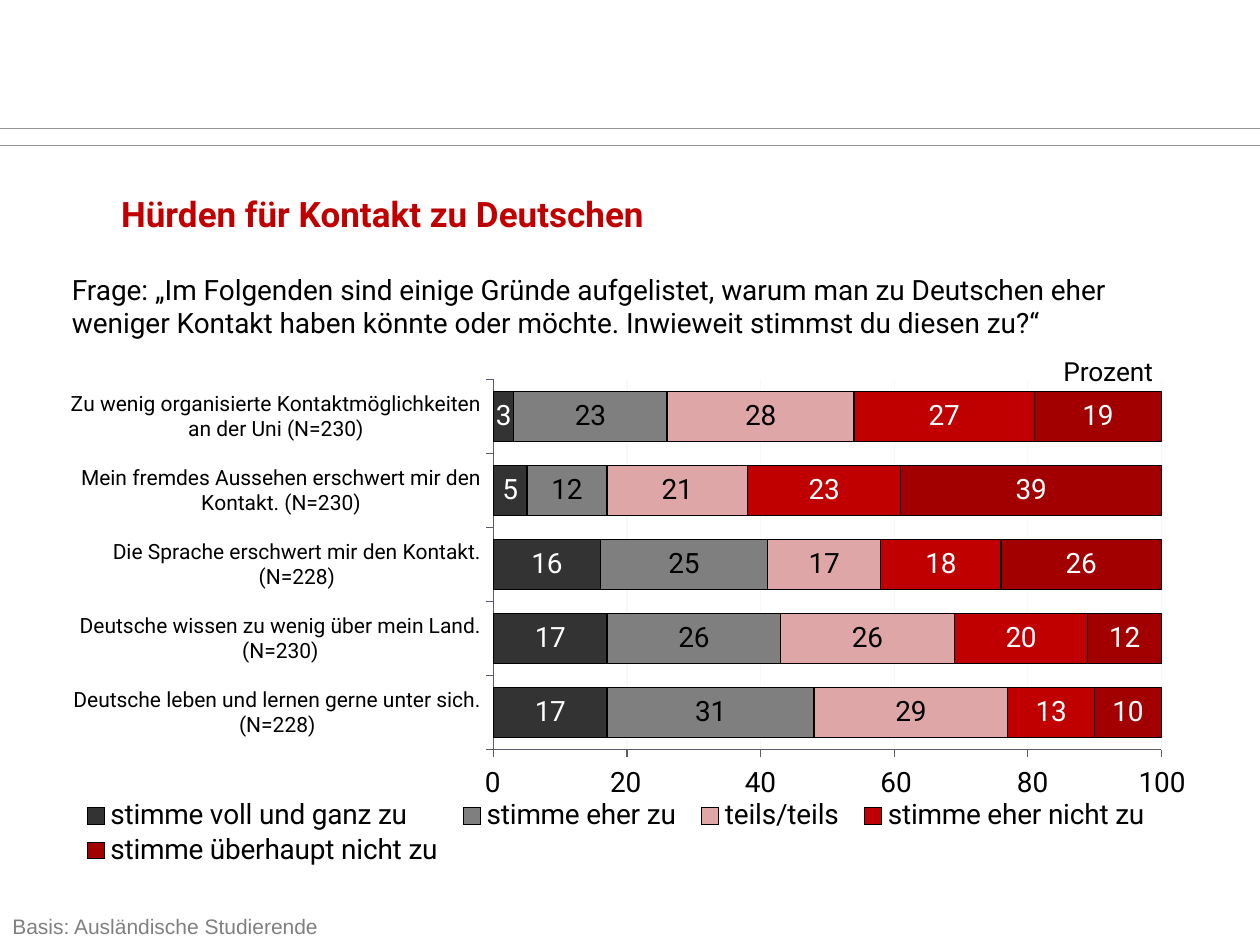
from lxml.etree import SubElement
from pptx import Presentation
from pptx.chart.data import CategoryChartData
from pptx.dml.color import RGBColor
from pptx.enum.chart import XL_CHART_TYPE, XL_LABEL_POSITION, XL_LEGEND_POSITION, XL_TICK_LABEL_POSITION, XL_TICK_MARK
from pptx.enum.shapes import MSO_CONNECTOR
from pptx.enum.text import MSO_ANCHOR, MSO_AUTO_SIZE, PP_ALIGN
from pptx.oxml import parse_xml
from pptx.oxml.ns import nsdecls, qn
from pptx.util import Pt

STATEMENTS = [
    "Deutsche leben und lernen gerne unter sich. (N=228)",
    "Deutsche wissen zu wenig über mein Land. (N=230)",
    "Die Sprache erschwert mir den Kontakt. (N=228)",
    "Mein fremdes Aussehen erschwert mir den Kontakt. (N=230)",
    "Zu wenig organisierte Kontaktmöglichkeiten an der Uni (N=230)",
]
ANSWERS = [
    ("stimme voll und ganz zu", (17, 17, 16, 5, 3), "333333", "FFFFFF"),
    ("stimme eher zu", (31, 26, 25, 12, 23), "7F7F7F", "000000"),
    ("teils/teils", (29, 26, 17, 21, 28), "DEA6A6", "000000"),
    ("stimme eher nicht zu", (13, 20, 18, 23, 27), "C00000", "FFFFFF"),
    ("stimme überhaupt nicht zu", (10, 12, 26, 39, 19), "A20000", "FFFFFF"),
]


def rgb(value):
    """Turn a hex string into a colour."""
    return RGBColor.from_string(value)


def manual_layout(x, y, w, h, inner=False):
    """Return a chart layout given as fractions of the chart area."""
    target = '<c:layoutTarget val="inner"/>' if inner else ""
    size = f'<c:x val="{x}"/><c:y val="{y}"/><c:w val="{w}"/><c:h val="{h}"/>'
    return parse_xml(
        f'<c:layout {nsdecls("c")}><c:manualLayout>{target}<c:xMode val="edge"/>'
        f'<c:yMode val="edge"/>{size}</c:manualLayout></c:layout>')


class SurveySlide:
    """Hold the style and the slide being built."""

    def __init__(self, slide, font="Roboto", ink="000000"):
        """Keep the slide with its default font and text colour."""
        self.slide, self.font, self.ink = slide, font, ink

    def style(self, font, size, color=None, name=None, bold=False):
        """Format one font."""
        font.name, font.size, font.bold = name or self.font, Pt(size), bold
        font.color.rgb = rgb(color or self.ink)

    def title(self, wording, box, size, color):
        """Fill and place the title placeholder."""
        heading = self.slide.shapes.title
        heading.left, heading.top, heading.width, heading.height = map(Pt, box)
        frame = heading.text_frame
        frame.text, frame.auto_size = wording, MSO_AUTO_SIZE.NONE
        frame.vertical_anchor = MSO_ANCHOR.TOP
        frame.paragraphs[0].alignment = PP_ALIGN.LEFT
        self.style(frame.paragraphs[0].font, size, color, bold=True)

    def text(self, wording, box, size, color=None, name=None, align=PP_ALIGN.LEFT, tabs=()):
        """Add a wrapped text box with optional tab stops."""
        frame = self.slide.shapes.add_textbox(*map(Pt, box)).text_frame
        frame.word_wrap, frame.text = True, wording
        paragraph = frame.paragraphs[0]
        paragraph.alignment = align
        if tabs:
            stops = SubElement(paragraph._p.get_or_add_pPr(), qn("a:tabLst"))
            for stop in tabs:
                SubElement(stops, qn("a:tab"), pos=str(Pt(stop)), algn="l")
        self.style(paragraph.font, size, color, name)

    def rule(self, y, color="969696"):
        """Draw a thin line across the slide."""
        line = self.slide.shapes.add_connector(MSO_CONNECTOR.STRAIGHT, 0, Pt(y), Pt(720), Pt(y))
        line.line.color.rgb, line.line.width = rgb(color), Pt(0.5)
        SubElement(line._element.spPr, qn("a:effectLst"))

    def axis(self, axis):
        """Format one chart axis."""
        axis.major_tick_mark, axis.minor_tick_mark = XL_TICK_MARK.OUTSIDE, XL_TICK_MARK.NONE
        axis.format.line.color.rgb, axis.format.line.width = rgb("5A5C6C"), Pt(0.75)
        self.style(axis.tick_labels.font, 12)

    def stacked_bars(self, categories, answers, box):
        """Add the stacked bar chart with its legend."""
        data = CategoryChartData(number_format="0")
        data.categories = categories
        for name, values, *_ in answers:
            data.add_series(name, values)
        chart = self.slide.shapes.add_chart(XL_CHART_TYPE.BAR_STACKED, *map(Pt, box), data).chart
        chart.has_title = False
        self.style(chart.font, 10)
        plot = chart.plots[0]
        plot.gap_width, plot.overlap, plot.vary_by_categories = 48, 100, False
        for series, (_, _, fill, ink) in zip(plot.series, answers):
            series.format.fill.solid()
            series.format.fill.fore_color.rgb = rgb(fill)
            series.format.line.color.rgb, series.format.line.width = rgb("000000"), Pt(0.75)
            labels = series.data_labels
            labels.show_value, labels.position = True, XL_LABEL_POSITION.CENTER
            self.style(labels.font, 16, ink)
        self.axis(chart.category_axis)
        percent = chart.value_axis
        self.axis(percent)
        percent.minimum_scale, percent.maximum_scale, percent.major_unit = 0, 100, 20
        percent.tick_label_position = XL_TICK_LABEL_POSITION.NONE
        percent.major_gridlines.format.line.color.rgb = rgb("F8F8F8")
        chart.has_legend = True
        legend = chart.legend
        legend.position, legend.include_in_layout = XL_LEGEND_POSITION.RIGHT, False
        self.style(legend.font, 16)
        legend._element.find(qn("c:legendPos")).addnext(manual_layout(0.01, 0.85, 0.98, 0.14))
        area = chart._chartSpace.chart.plotArea
        for old in area.findall(qn("c:layout")):
            area.remove(old)
        area.insert(0, manual_layout(0.39, 0.05, 0.6, 0.71, inner=True))


def main():
    """Build and save the slide."""
    deck = Presentation()
    deck.slide_width, deck.slide_height = Pt(720), Pt(540)
    page = SurveySlide(deck.slides.add_slide(deck.slide_layouts[5]))
    for y in (83, 73.5):
        page.rule(y)
    page.title("Hürden für Kontakt zu Deutschen", (62, 106.5, 648, 31.5), 20, "C00000")
    page.text("Frage: „Im Folgenden sind einige Gründe aufgelistet, warum man zu Deutschen eher "
              "weniger Kontakt haben könnte oder möchte. Inwieweit stimmst du diesen zu?“",
              (34, 152, 646.5, 46), 16)
    page.stacked_bars(STATEMENTS, ANSWERS, (34, 202, 636, 298))
    page.text("Prozent", (427.5, 199.5, 238.5, 25), 15, align=PP_ALIGN.RIGHT)
    page.text("Basis: Ausländische Studierende", (0, 518.5, 720, 21.5), 12, "808080", "Arial")
    page.text("\t".join(map(str, range(0, 101, 20))), (270, 433.5, 422, 26.5), 16,
              tabs=(71.5, 148.5, 226, 304, 373.5))
    deck.save("out.pptx")


if __name__ == "__main__":
    main()
